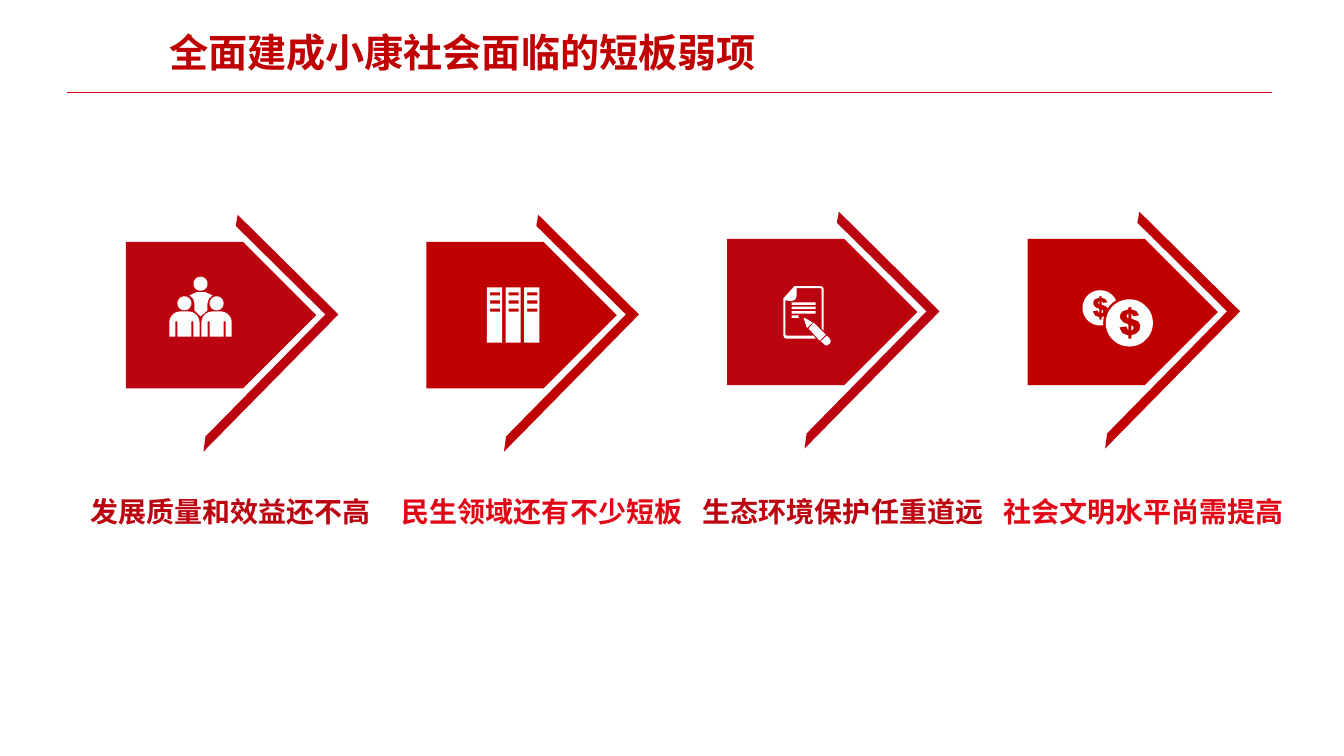
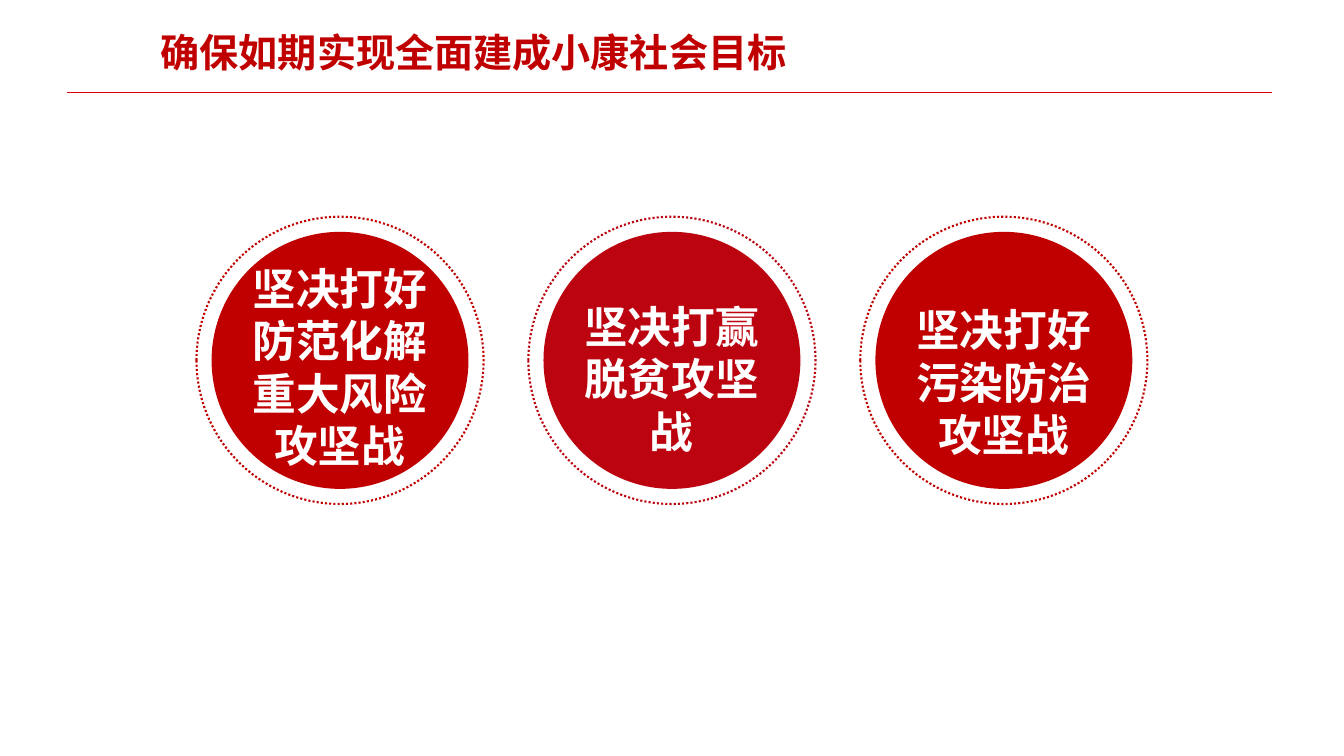
from dataclasses import dataclass
from math import cos, radians, sin
from typing import Any, NamedTuple

from lxml.etree import SubElement
from pptx import Presentation
from pptx.dml.color import RGBColor as Rgb
from pptx.enum.dml import MSO_LINE as Dash
from pptx.enum.shapes import MSO_CONNECTOR as Link, MSO_SHAPE as Kind
from pptx.enum.text import MSO_ANCHOR as Anchor, MSO_AUTO_SIZE as Auto, PP_ALIGN as Align
from pptx.oxml.ns import qn
from pptx.util import Pt

Point = tuple[float, float]
Path = list[Point]


@dataclass(frozen=True)
class Theme:
    font: str = "Noto Sans CJK SC"
    red: str = "C00000"
    wine: str = "BC0410"
    bright: str = "E10515"
    rule: str = "D7000D"
    white: str = "FFFFFF"
    icon: str = "FDFDFD"
    title: float = 28
    label: float = 20
    goal: float = 31.2


THEME = Theme()


class Box(NamedTuple):
    x: float
    y: float
    w: float
    h: float

    def pts(self) -> list[Pt]:
        return [Pt(v) for v in self]


class Layer(NamedTuple):
    paths: list[Path]
    cut: bool = False  # a cut layer takes the colour of the plate below


class Step(NamedTuple):
    text: str
    tone: str
    ink: str
    left: float
    top: float
    icon: list[Layer]


class Goal(NamedTuple):
    text: str
    tone: str
    top: float
    high: float


# Outline helpers
def rect(x: float, y: float, w: float, h: float) -> Path:
    return [(x, y), (x + w, y), (x + w, y + h), (x, y + h)]


def arc(x: float, y: float, r: float, start: int = 0, end: int = 360) -> Path:
    return [(x + r * cos(radians(a)), y + r * sin(radians(a)))
            for a in range(start, end + 1, 10)]


def place(path: Path, x: float, y: float, zoom: float = 1) -> Path:
    return [(x + px * zoom, y + py * zoom) for px, py in path]


# Icons, measured from the top left of their plate
def crowd() -> list[Layer]:
    body = [(0, 18), *arc(7.9, 7.9, 7.9, 180, 270), *arc(13.7, 7.9, 7.9, 270, 360),
            (21.6, 18), (17.2, 18), (17.2, 7.2), (15.8, 7.2), (15.8, 18),
            (5.8, 18), (5.8, 7.2), (4.4, 7.2), (4.4, 18)]
    chest = [(58.3, 49), (58.3, 44), (59.3, 40.5), (61.9, 38.2), (56.9, 36),
             (50.4, 36), (45.4, 38.2), (48, 40.5), (49, 44), (49, 49), (53.3, 53.3)]
    heads = [arc(x, y, 5) for x, y in ((53.3, 29.9), (41.8, 43.9), (64.8, 43.9))]
    return [Layer([chest, *heads, *(place(body, x, 49.7) for x in (31, 54))])]


def books() -> list[Layer]:
    paths = []
    for i in range(3):
        x = 43.2 + 13.3 * i
        paths.append(rect(x, 32.4, 10.8, 39.6))
        paths += [rect(x + 2.2, 36 + 5.8 * j, 7.2, 2.2) for j in range(3)]
    return [Layer(paths)]


def note() -> list[Layer]:
    page = [(41.8, 43.9), (46.1, 44.6), (48.7, 43.4), (49.7, 41), (49.7, 35.3),
            (67, 35.3), (67.7, 36), (67.7, 64.1), (69.1, 65.5), (69.1, 36),
            (68.5, 34.4), (67, 33.8), (48.2, 33.8), (40.3, 42.5), (40.3, 69.1),
            (40.9, 70.7), (42.5, 71.3), (63.4, 71.3), (61.9, 69.1), (42.5, 69.1),
            (41.8, 68.4)]
    lines = [rect(46.1, 45.4 + 3.1 * i, w, 1.8) for i, w in enumerate((17.3, 17.3, 17.3, 5))]
    tip = [(57.6, 63.4), (61.2, 59.8), (57.6, 57.6), (54.7, 56.2), (56.9, 63.4)]
    shaft = [(61.9, 59.8), (58.3, 64.1), (66.2, 72.7), (70.6, 68.4)]
    cap = [(67, 73.1), (69.8, 75.6), (71.3, 76.3), (73.4, 74.9), (74.2, 73.1),
           (73.4, 71.3), (71.3, 69.1)]
    return [Layer([page, *lines, tip, shaft, cap])]


def coins() -> list[Layer]:
    sign = [(7.2, -5.4), (2.9, -4.7), (1.4, -6.8), (1.4, -3.2), (6.5, -1.1),
            (7.9, 1.8), (7.3, 5.2), (5, 7.6), (1.4, 9), (1.4, 11.2), (-0.7, 11.2),
            (-0.7, 9), (-5, 7.4), (-7.2, 3.2), (-2.2, 2.5), (-0.7, 5.4),
            (-0.7, 1.1), (-4.3, -0.4), (-6.5, -3), (-6.5, -6), (-5, -8.3),
            (-0.7, -9.7), (-0.7, -11.2), (1.4, -11.2), (1.4, -9.7), (5, -8.6)]
    holes = [[(1.4, 5.4), (2.9, 4.3), (2.9, 2.6), (1.4, 1.8)],
             [(-0.7, -6.8), (-1.7, -5.5), (-1.7, -4.2), (-0.7, -3.2)]]

    def coin(x: float, y: float, r: float) -> Layer:
        return Layer([arc(x, y, r), *(place(p, x, y, r / 16.9) for p in (sign, *holes))])

    return [coin(51.8, 49.3, 12.6), Layer([arc(72.7, 60.1, 18.7)], True),
            coin(72.7, 60.1, 16.9)]


# Drawing
def assign(item: Any, form: dict[str, Any]) -> None:
    for key, val in form.items():
        setattr(item, key, val)


def paint(shape: Any, tone: str) -> None:
    shape.shadow.inherit = False
    shape.fill.solid()
    shape.fill.fore_color.rgb = Rgb.from_string(tone)
    shape.line.fill.background()


def trace(shapes: Any, paths: list[Path], x: float, y: float, tone: str) -> None:
    # A hundredth of a point is the drawing unit
    grid = [[(px * 100, py * 100) for px, py in path] for path in paths]
    pen = shapes.build_freeform(*grid[0][0], scale=Pt(1) / 100)
    pen.add_line_segments(grid[0][1:], close=True)
    for path in grid[1:]:
        pen.move_to(*path[0])
        pen.add_line_segments(path[1:], close=True)
    paint(pen.convert_to_shape(Pt(x), Pt(y)), tone)


def write(shape: Any, text: str, size: float, tone: str, align: Align,
          wrap: bool = True, pad: Point = (7.2, 3.6)) -> None:
    frame = shape.text_frame
    side, end = map(Pt, pad)
    assign(frame, dict(word_wrap=wrap, auto_size=Auto.NONE, vertical_anchor=Anchor.MIDDLE,
                       margin_left=side, margin_right=side,
                       margin_top=end, margin_bottom=end))
    para = frame.paragraphs[0]
    para.alignment = align
    run = para.add_run()
    run.text = text
    assign(run.font, dict(size=Pt(size), bold=True, name=THEME.font))
    run.font.color.rgb = Rgb.from_string(tone)
    SubElement(run.font._element, qn("a:ea"), typeface=THEME.font)


def start(deck: Any, title: str, left: float) -> Any:
    """Add a slide with its title and the red rule."""
    slide = deck.slides.add_slide(deck.slide_layouts[5])
    head = slide.shapes.title
    assign(head, dict(zip(("left", "top", "width", "height"),
                          Box(left, 16.6, 640, 41).pts())))
    write(head, title, THEME.title, THEME.red, Align.CENTER)
    rule = slide.shapes.add_connector(Link.STRAIGHT, Pt(909.4), Pt(66.2), Pt(48.2), Pt(66.2))
    rule.line.width = Pt(0.75)
    rule.line.color.rgb = Rgb.from_string(THEME.rule)
    SubElement(rule._element.spPr, qn("a:effectLst"))
    return slide


def draw_step(slide: Any, step: Step, x: float) -> None:
    edge = [(79.9, -19.4), (151.9, 51.8), (55.4, 149.8), (56.9, 139),
            (142.6, 51.8), (78.5, -11.5)]
    parts = slide.shapes.add_group_shape().shapes
    trace(parts, [edge], x, step.top, step.tone)
    plate = parts.add_shape(Kind.PENTAGON, *Box(x, step.top, 136, 104.6).pts())
    paint(plate, step.tone)
    for layer in step.icon:
        trace(parts, layer.paths, x, step.top, step.tone if layer.cut else THEME.icon)
    label = slide.shapes.add_textbox(*Box(step.left, 349.2, 216.7, 31.7).pts())
    write(label, step.text, THEME.label, step.ink, Align.LEFT, wrap=False)


def draw_goal(slide: Any, goal: Goal, x: float) -> None:
    y, size, gap = 165.6, 183.6, 10.8
    disc = slide.shapes.add_shape(Kind.OVAL, *Box(x, y, size, size).pts())
    paint(disc, goal.tone)
    wide = size + 2 * gap
    ring = slide.shapes.add_shape(Kind.OVAL, *Box(x - gap, y - gap, wide, wide).pts())
    ring.shadow.inherit = False
    ring.fill.background()
    ring.line.color.rgb = Rgb.from_string(goal.tone)
    assign(ring.line, dict(width=Pt(1.5), dash_style=Dash.ROUND_DOT))
    text = slide.shapes.add_textbox(*Box(x + 11.6, goal.top, 160, goal.high).pts())
    write(text, goal.text, THEME.goal, THEME.white, Align.CENTER, pad=(9.4, 4.3))


def main() -> None:
    deck = Presentation()
    assign(deck, dict(slide_width=Pt(960.5), slide_height=Pt(540)))

    # Weak points
    red, wine, bright = THEME.red, THEME.wine, THEME.bright
    steps = [
        Step("发展质量和效益还不高", wine, wine, 57.6, 172.8, crowd()),
        Step("民生领域还有不少短板", red, bright, 280.1, 172.8, books()),
        Step("生态环境保护任重道远", wine, wine, 495.2, 170.6, note()),
        Step("社会文明水平尚需提高", red, bright, 710, 170.6, coins()),
    ]
    slide = start(deck, "全面建成小康社会面临的短板弱项", 10.5)
    for i, step in enumerate(steps):
        draw_step(slide, step, 90 + 214.8 * i)

    # Goals
    goals = [
        Goal("坚决打好防范化解重大风险攻坚战", red, 181.4, 160.6),
        Goal("坚决打赢脱贫攻坚战", wine, 208.8, 123.1),
        Goal("坚决打好污染防治攻坚战", red, 211, 123.1),
    ]
    slide = start(deck, "确保如期实现全面建成小康社会目标", 18.4)
    for i, goal in enumerate(goals):
        draw_goal(slide, goal, 151.2 + 237.2 * i)

    deck.save("out.pptx")


if __name__ == "__main__":
    main()
